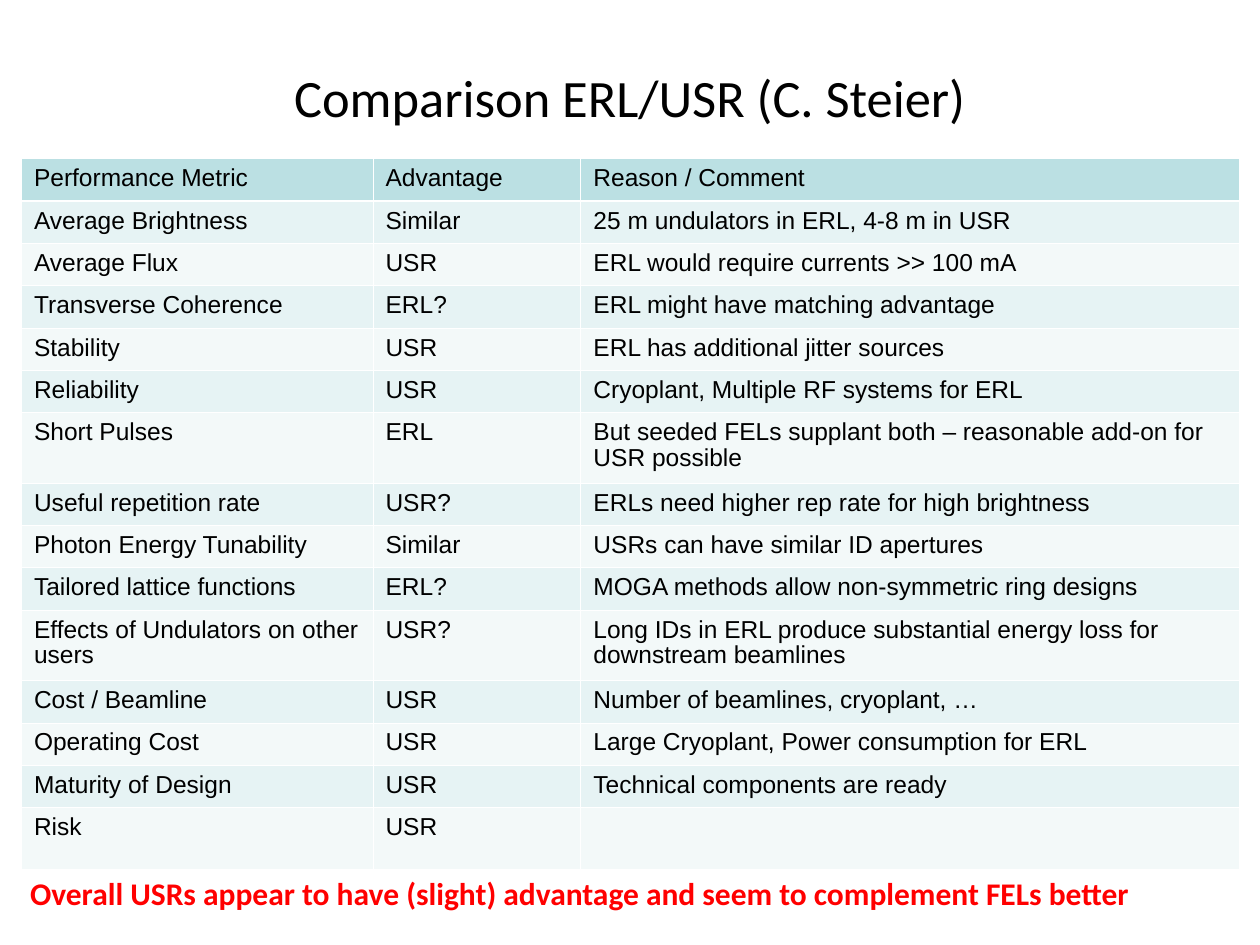
from dataclasses import dataclass

from lxml.etree import SubElement
from pptx import Presentation
from pptx.dml.color import RGBColor as RGB
from pptx.enum.text import MSO_ANCHOR as Anchor, PP_ALIGN as Align
from pptx.oxml.ns import qn
from pptx.util import Inches, Pt


@dataclass(frozen=True)
class Theme:
    """Colours, fonts and type sizes of the slide."""
    black: RGB = RGB(0x00, 0x00, 0x00)
    red: RGB = RGB(0xFF, 0x00, 0x00)
    header: RGB = RGB(0xBB, 0xE0, 0xE3)
    bands: tuple = (RGB(0xE6, 0xF3, 0xF4), RGB(0xF3, 0xF9, 0xF9))
    rule: RGB = RGB(0xFF, 0xFF, 0xFF)
    thin: float = 0.45
    thick: float = 1.47
    heading_font: str = "Calibri"
    table_font: str = "Arial"
    title_size: int = 30
    table_size: int = 14
    summary_size: int = 18


THEME = Theme()
COLUMN_WIDTHS = (2.79, 1.65, 5.23)
SPECIAL_HEIGHTS = {6: 0.56, 10: 0.56, 14: 0.49}
ROWS = (
    ("Performance Metric", "Advantage", "Reason / Comment"),
    ("Average Brightness", "Similar", "25 m undulators in ERL, 4-8 m in USR"),
    ("Average Flux", "USR", "ERL would require currents >> 100 mA"),
    ("Transverse Coherence", "ERL?", "ERL might have matching advantage"),
    ("Stability", "USR", "ERL has additional jitter sources"),
    ("Reliability", "USR", "Cryoplant, Multiple RF systems for ERL"),
    ("Short Pulses", "ERL",
     "But seeded FELs supplant both – reasonable add-on for USR possible"),
    ("Useful repetition rate", "USR?",
     "ERLs need higher rep rate for high brightness"),
    ("Photon Energy Tunability", "Similar", "USRs can have similar ID apertures"),
    ("Tailored lattice functions", "ERL?",
     "MOGA methods allow non-symmetric ring designs"),
    ("Effects of Undulators on other users", "USR?",
     "Long IDs in ERL produce substantial energy loss for downstream beamlines"),
    ("Cost / Beamline", "USR", "Number of beamlines, cryoplant, …"),
    ("Operating Cost", "USR", "Large Cryoplant, Power consumption for ERL"),
    ("Maturity of Design", "USR", "Technical components are ready"),
    ("Risk", "USR", ""),
)


def style_runs(p, font, size, color, bold=False):
    """Format every run of a paragraph."""
    for r in p.runs:
        r.font.name = font
        r.font.size = Pt(size)
        r.font.color.rgb = color
        r.font.bold = bold


def set_border(cell, side, width):
    """Draw one border of a cell, its side given as L, R, T or B."""
    ln = SubElement(cell._tc.get_or_add_tcPr(), qn(f"a:ln{side}"), w=str(Pt(width)))
    fill = SubElement(ln, qn("a:solidFill"))
    SubElement(fill, qn("a:srgbClr"), val=str(THEME.rule))


def fill_cell(cell, text, row):
    """Write and format one table cell according to its row."""
    cell.margin_left = cell.margin_right = Inches(0.1)
    cell.margin_top, cell.margin_bottom = Inches(0.06), Inches(0.05)
    thick_side = {0: "B", 1: "T"}.get(row)
    for side in "LRTB":
        set_border(cell, side, THEME.thick if side == thick_side else THEME.thin)
    cell.fill.solid()
    cell.fill.fore_color.rgb = THEME.bands[(row - 1) % 2] if row else THEME.header
    if text:
        cell.text_frame.text = text
        p = cell.text_frame.paragraphs[0]
        p.line_spacing = 0.93
        style_runs(p, THEME.table_font, THEME.table_size, THEME.black)


def add_title(slide, left, top, width, height):
    """Place the centred slide title in its box."""
    tf = slide.shapes.add_textbox(left, top, width, height).text_frame
    tf.word_wrap = True
    tf.vertical_anchor = Anchor.MIDDLE
    tf.text = "Comparison ERL/USR (C. Steier)"
    p = tf.paragraphs[0]
    p.alignment = Align.CENTER
    style_runs(p, THEME.heading_font, THEME.title_size, THEME.black)


def add_comparison(slide, left, top, width, height):
    """Place the comparison table, sharing spare height among plain rows."""
    table = slide.shapes.add_table(
        len(ROWS), len(COLUMN_WIDTHS), left, top, width, height).table
    for column, share in zip(table.columns, COLUMN_WIDTHS):
        column.width = int(width * share / sum(COLUMN_WIDTHS))
    special = Inches(sum(SPECIAL_HEIGHTS.values()))
    plain = (height - special) // (len(ROWS) - len(SPECIAL_HEIGHTS))
    for i, texts in enumerate(ROWS):
        table.rows[i].height = (
            Inches(SPECIAL_HEIGHTS[i]) if i in SPECIAL_HEIGHTS else plain)
        for cell, text in zip(table.rows[i].cells, texts):
            fill_cell(cell, text, i)


def add_summary(slide, left, top, width, height):
    """Place the concluding line below the table."""
    tf = slide.shapes.add_textbox(left, top, width, height).text_frame
    tf.word_wrap = False
    tf.text = ("Overall USRs appear to have (slight) advantage "
               "and seem to complement FELs better")
    style_runs(tf.paragraphs[0], THEME.heading_font, THEME.summary_size,
               THEME.red, bold=True)


def main():
    """Build and save the slide."""
    prs = Presentation()
    prs.slide_width, prs.slide_height = Inches(10), Inches(7.5)
    slide = prs.slides.add_slide(prs.slide_layouts[6])
    add_title(slide, Inches(0.5), Inches(0.38), Inches(9), Inches(0.77))
    add_comparison(slide, Inches(0.17), Inches(1.26), Inches(9.67), Inches(5.64))
    add_summary(slide, Inches(0.14), Inches(6.89), Inches(9), Inches(0.4))
    prs.save("out.pptx")


if __name__ == "__main__":
    main()
